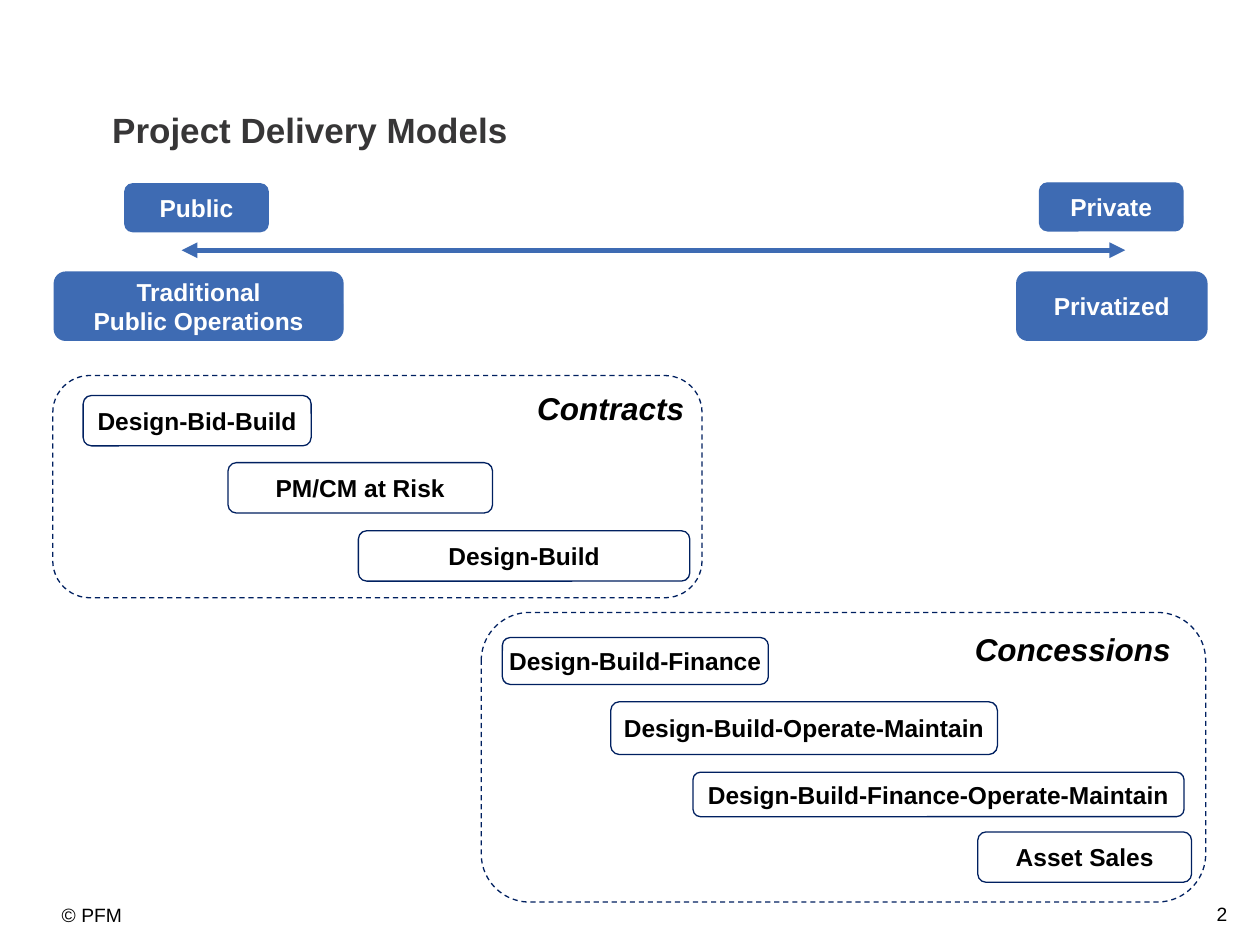
from dataclasses import dataclass

from lxml import etree
from pptx import Presentation
from pptx.dml.color import RGBColor
from pptx.enum.dml import MSO_LINE
from pptx.enum.shapes import MSO_CONNECTOR, MSO_SHAPE
from pptx.enum.text import MSO_ANCHOR, PP_ALIGN
from pptx.oxml.ns import qn
from pptx.util import Pt

ROUND = MSO_SHAPE.ROUNDED_RECTANGLE
LINE = MSO_CONNECTOR.STRAIGHT
DASH = MSO_LINE.DASH
MID, TOP = MSO_ANCHOR.MIDDLE, MSO_ANCHOR.TOP
LEFT, MIDDLE, RIGHT = PP_ALIGN.LEFT, PP_ALIGN.CENTER, PP_ALIGN.RIGHT

BLUE, NAVY, WHITE, BLACK, GREY = "3E6BB3", "002060", "FFFFFF", "000000", "373637"
FONT = "Arial"


@dataclass
class Box:
    x: float
    y: float
    w: float
    h: float
    text: str = ""


@dataclass
class Style:
    fill: str = ""
    line: str = ""
    ink: str = BLACK
    size: float = 14
    bold: bool = True
    italic: bool = False
    dash: bool = False


POLE = Style(fill=BLUE, line=BLUE, ink=WHITE)
MODEL = Style(line=NAVY)
GROUP = Style(line=NAVY, dash=True)
LABEL = Style(size=18, italic=True)
TITLE = Style(ink=GREY, size=20)
NOTE = Style(size=11, bold=False)

GROUPS = [
    Box(275, 350, 414, 165.5),
    Box(30.2, 214.6, 371, 127),
]
POLES = [
    Box(71.3, 105, 82, 27.4, "Public"),
    Box(594, 104.5, 82, 27.4, "Private"),
    Box(31, 155.5, 165, 39, "Traditional\vPublic Operations"),
    Box(581, 155.5, 108.7, 39, "Privatized"),
]
MODELS = [
    Box(47.5, 226, 130.3, 28.8, "Design-Bid-Build"),
    Box(130.3, 264.4, 151.2, 28.8, "PM/CM at Risk"),
    Box(204.8, 303.3, 189.4, 28.8, "Design-Build"),
    Box(287.1, 364.3, 152, 26.8, "Design-Build-Finance"),
    Box(349, 401, 221, 30.2, "Design-Build-Operate-Maintain"),
    Box(396, 441.3, 280.6, 25.4, "Design-Build-Finance-Operate-Maintain"),
    Box(558.7, 475.4, 122.2, 28.8, "Asset Sales"),
]
LABELS = [
    Box(287, 214.6, 124, 37.4, "Contracts"),
    Box(541.4, 351.5, 143.3, 39, "Concessions"),
]


def tint(code: str) -> RGBColor:
    return RGBColor.from_string(code)


def write(shape, text: str, style: Style, align, anchor, pad: float, wrap: bool) -> None:
    frame = shape.text_frame
    frame.word_wrap = wrap
    frame.vertical_anchor = anchor
    frame.margin_left = frame.margin_right = Pt(pad)
    frame.margin_top = frame.margin_bottom = Pt(pad / 2)
    frame.text = text
    para = frame.paragraphs[0]
    para.alignment = align
    font = para.font
    font.name, font.size = FONT, Pt(style.size)
    font.bold, font.italic = style.bold, style.italic
    font.color.rgb = tint(style.ink)


def draw(slide, box: Box, style: Style) -> None:
    shape = slide.shapes.add_shape(ROUND, Pt(box.x), Pt(box.y), Pt(box.w), Pt(box.h))
    shape.shadow.inherit = False
    if style.fill:
        shape.fill.solid()
        shape.fill.fore_color.rgb = tint(style.fill)
    else:
        shape.fill.background()
    if style.line:
        shape.line.color.rgb = tint(style.line)
        shape.line.width = Pt(0.75)
    else:
        shape.line.fill.background()
    if style.dash:
        shape.line.dash_style = DASH
    if box.text:
        write(shape, box.text, style, MIDDLE, MID, 0, False)


def note(slide, box: Box, style: Style, align=LEFT, anchor=TOP, pad=7.2, wrap=True):
    """Add a plain text box and return it."""
    shape = slide.shapes.add_textbox(Pt(box.x), Pt(box.y), Pt(box.w), Pt(box.h))
    write(shape, box.text, style, align, anchor, pad, wrap)
    return shape


def arrow(slide, x1: float, x2: float, y: float) -> None:
    """Add a level line with a head at both ends."""
    line = slide.shapes.add_connector(LINE, Pt(x1), Pt(y), Pt(x2), Pt(y))
    line.line.color.rgb = tint(BLUE)
    line.line.width = Pt(3)
    stroke = line.line._get_or_add_ln()
    for end in ("a:headEnd", "a:tailEnd"):
        etree.SubElement(stroke, qn(end), type="triangle")
    etree.SubElement(line._element.spPr, qn("a:effectLst"))


def main() -> None:
    deck = Presentation()
    deck.slide_width, deck.slide_height = Pt(720), Pt(540)
    slide = deck.slides.add_slide(deck.slide_layouts[6])

    note(slide, Box(35.3, 516.2, 100, 19.4, "© PFM"), NOTE, pad=0, wrap=False)
    note(slide, Box(677.5, 512, 31, 28, "2"), NOTE, RIGHT)
    title = note(slide, Box(57, 59.8, 372, 31, "Project Delivery Models"), TITLE, anchor=MID)
    title.text_frame.paragraphs[0].line_spacing = 0.9

    arrow(slide, 103.8, 643, 143)
    for boxes, style in ((GROUPS, GROUP), (POLES, POLE), (MODELS, MODEL), (LABELS, LABEL)):
        for box in boxes:
            draw(slide, box, style)

    deck.save("out.pptx")


if __name__ == "__main__":
    main()
